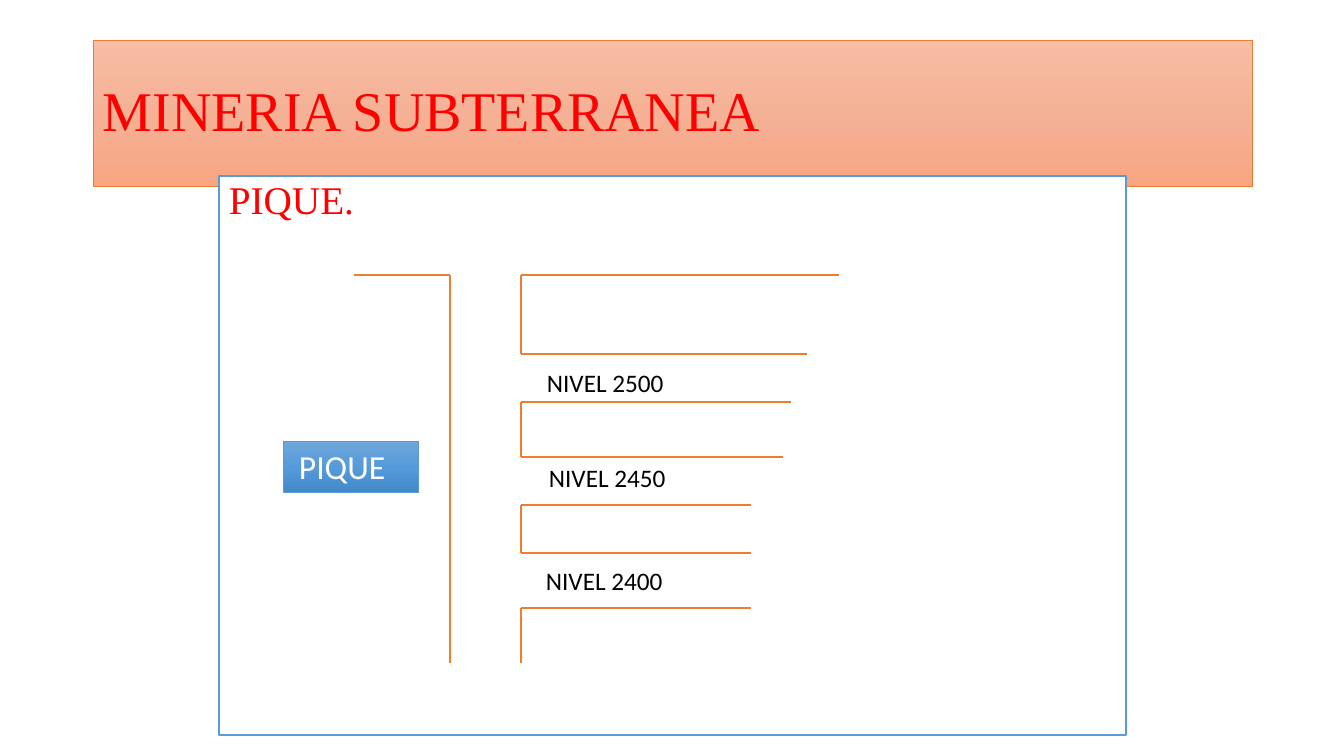
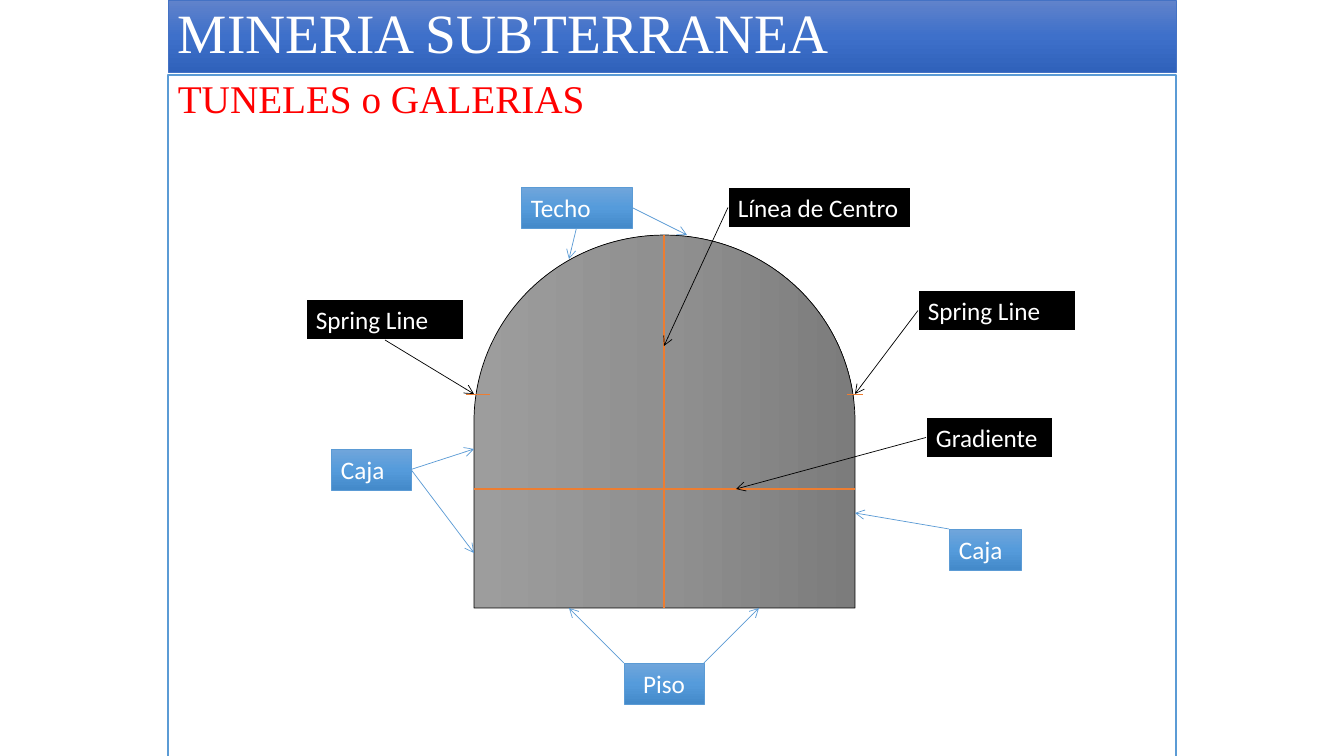
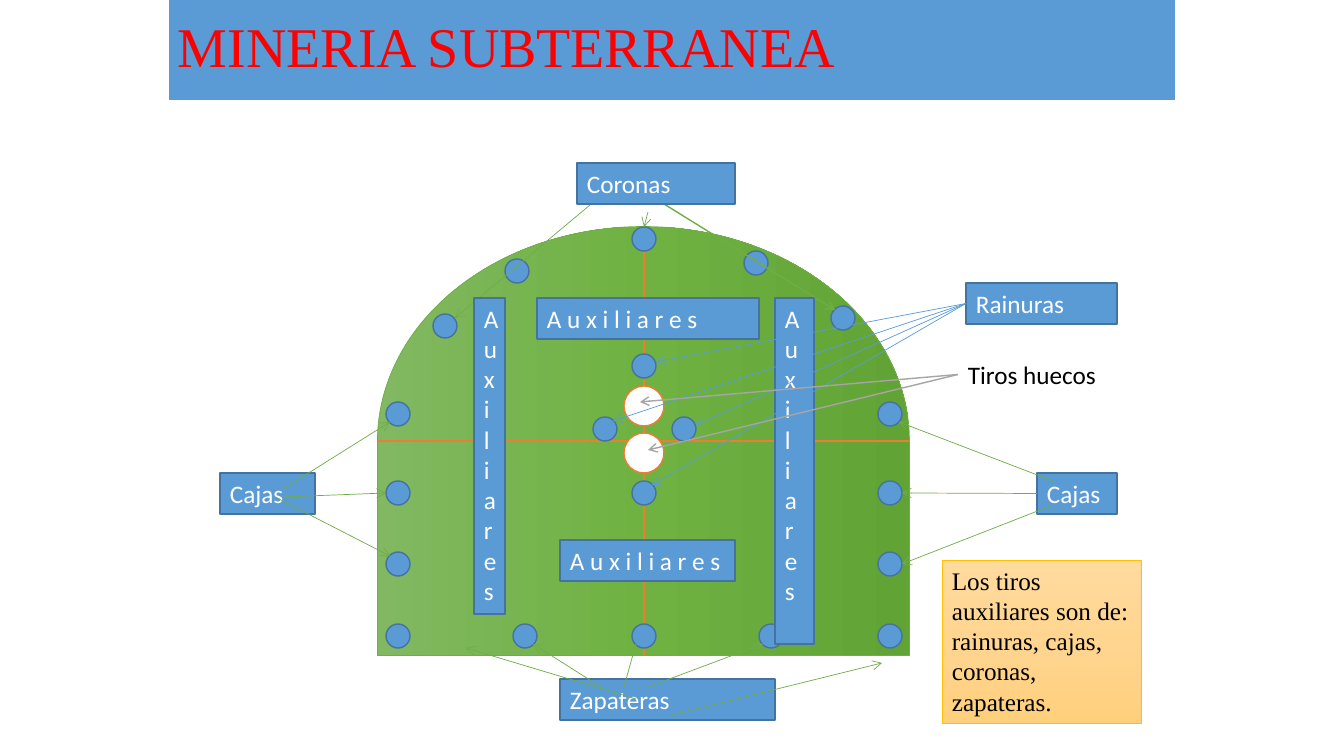
from copy import deepcopy

from lxml import etree
from pptx import Presentation
from pptx.dml.color import RGBColor
from pptx.enum.shapes import MSO_CONNECTOR, MSO_SHAPE
from pptx.enum.text import MSO_ANCHOR, PP_ALIGN
from pptx.oxml.ns import qn
from pptx.util import Pt

RECT = MSO_SHAPE.RECTANGLE
DELAY = MSO_SHAPE.FLOWCHART_DELAY
DISC = MSO_SHAPE.FLOWCHART_CONNECTOR
STRAIGHT = MSO_CONNECTOR.STRAIGHT
TOP, MIDDLE = MSO_ANCHOR.TOP, MSO_ANCHOR.MIDDLE
LEFT, CENTER = PP_ALIGN.LEFT, PP_ALIGN.CENTER

PX = 12192000 / 1344
ROW = 41  # height of a one-line label

BLACK = RGBColor(0x00, 0x00, 0x00)
WHITE = RGBColor(0xFF, 0xFF, 0xFF)
RED = RGBColor(0xFF, 0x00, 0x00)
ORANGE = RGBColor(0xED, 0x7D, 0x31)
BLUE = RGBColor(0x5B, 0x9B, 0xD5)
NAVY = RGBColor(0x43, 0x73, 0x9E)
ROYAL = RGBColor(0x44, 0x72, 0xC4)
GREEN = RGBColor(0x70, 0xAD, 0x47)
GREY = RGBColor(0xA5, 0xA5, 0xA5)
GOLD = RGBColor(0xFF, 0xC0, 0x00)

# Three-stop gradients, from light to dark
PEACH = [RGBColor(0xF7, 0xBD, 0xA5), RGBColor(0xF5, 0xB1, 0x96), RGBColor(0xF8, 0xA5, 0x82)]
SKY = [RGBColor(0x71, 0xA6, 0xDB), RGBColor(0x55, 0x9B, 0xDB), RGBColor(0x44, 0x8A, 0xCA)]
DEEP = [RGBColor(0x61, 0x83, 0xCB), RGBColor(0x3E, 0x70, 0xCA), RGBColor(0x30, 0x62, 0xBB)]
STONE = [RGBColor(0x9D, 0x9D, 0x9D), RGBColor(0x90, 0x90, 0x90), RGBColor(0x7C, 0x7C, 0x7C)]
LEAF = [RGBColor(0x81, 0xB8, 0x61), RGBColor(0x6F, 0xB2, 0x42), RGBColor(0x62, 0xA3, 0x36)]
SAND = [RGBColor(0xFF, 0xDB, 0x9E), RGBColor(0xFF, 0xD5, 0x90), RGBColor(0xFF, 0xD0, 0x7C)]

SANS = {"name": "Calibri", "size": Pt(18)}
LARGE = {"name": "Calibri", "size": Pt(24)}
SERIF = {"name": "Times New Roman", "size": Pt(18)}
HEAD = {"name": "Times New Roman", "size": Pt(40)}
SUB = {"name": "Times New Roman", "size": Pt(28)}

# Fill, outline, outline width, text colour
GLOSS = (SKY, BLUE, 0.5, WHITE)
DARK = (BLACK, WHITE, 1.5, WHITE)
FLAT = (BLUE, NAVY, 1, WHITE)
PANEL = (WHITE, BLUE, 1, RED)
RING = (WHITE, ORANGE, 1, BLACK)
PLAIN = (None, None, 0, BLACK)


def box(slide, kind, at, look, text="", font=SANS, anchor=TOP, align=LEFT, space=1.0):
    """Add a shape, or a text box when kind is None, in the given look."""
    fill, edge, width, ink = look
    place = [int(v * PX) for v in at]
    if kind is None:
        shape = slide.shapes.add_textbox(*place)
    else:
        shape = slide.shapes.add_shape(kind, *place)
        shape.shadow.inherit = False
        shape.line.color.rgb = edge
        shape.line.width = Pt(width)
        if isinstance(fill, list):
            shape.fill.gradient()
            shape.fill.gradient_angle = 270
            stops = next(shape.element.iter(qn("a:gsLst")))
            stops.insert(1, deepcopy(stops[0]))
            for stop, spot, tint in zip(shape.fill.gradient_stops, (0, 0.5, 1), fill):
                stop.position = spot
                stop.color.rgb = tint
        else:
            shape.fill.solid()
            shape.fill.fore_color.rgb = fill
    if text:
        frame = shape.text_frame
        frame.word_wrap = True
        frame.vertical_anchor = anchor
        frame.text = text
        for para in frame.paragraphs:
            para.alignment = align
            para.line_spacing = space
            for name, value in font.items():
                setattr(para.font, name, value)
            para.font.color.rgb = ink
    return shape


def line(slide, start, end, color, width, arrow=False):
    """Add a straight line; start is a point or a (shape, side) pair."""
    joined = not isinstance(start[0], int)
    first = end if joined else start
    link = slide.shapes.add_connector(STRAIGHT, *[int(v * PX) for v in (*first, *end)])
    if joined:
        link.begin_connect(*start)
    link.line.color.rgb = color
    link.line.width = Pt(width)
    props = link.element.spPr
    if arrow:
        etree.SubElement(props.find(qn("a:ln")), qn("a:tailEnd"), type="arrow")
    etree.SubElement(props, qn("a:effectLst"))


deck = Presentation()
deck.slide_width, deck.slide_height = int(1344 * PX), int(756 * PX)

# Titles
slides = []
for at, look, size in [
    ((93, 40, 1159, 146), (PEACH, ORANGE, 0.5, RED), 40),
    ((168, 0, 1008, 72), (DEEP, ROYAL, 0.5, WHITE), 39.6),
    ((168, -3, 1008, 104), (BLUE, WHITE, 1.5, RED), 40),
]:
    page = deck.slides.add_slide(deck.slide_layouts[6])
    box(page, RECT, at, look, "MINERIA SUBTERRANEA", {**HEAD, "size": Pt(size)}, MIDDLE, space=0.9)
    slides.append(page)
shaft, tunnel, blast = slides

for page, at, text in [
    (shaft, (219, 176, 907, 559), "PIQUE."),
    (tunnel, (168, 75, 1008, 684), "TUNELES o GALERIAS"),
]:
    box(page, RECT, at, PANEL, text, SUB, space=0.9)

# Slide 1: shaft walls and levels
line(shaft, (450, 275), (450, 663), ORANGE, 1.5)
line(shaft, (450, 275), (354, 275), ORANGE, 1.5)
for top, base, roof, floor in [
    (275, 354, 839, 807),
    (402, 457, 791, 783),
    (505, 553, 751, 751),
    (608, 663, 751, None),
]:
    line(shaft, (521, top), (521, base), ORANGE, 1.5)
    line(shaft, (521, top), (roof, top), ORANGE, 1.5)
    if floor:
        line(shaft, (521, base), (floor, base), ORANGE, 1.5)

for left, top, level in [(537, 362, 2500), (539, 457, 2450), (536, 560, 2400)]:
    box(shaft, None, (left, top, 174, ROW), PLAIN, f"NIVEL {level}")
sign = box(shaft, RECT, (283, 441, 135, 51), GLOSS, "PIQUE", LARGE)
sign.text_frame.margin_left = int(16 * PX)

# Slide 2: tunnel section
box(tunnel, DELAY, (478, 231, 373, 381), (STONE, BLACK, 0.5, WHITE)).rotation = 270
for start, end, width in [
    ((664, 235), (664, 608), 1),
    ((474, 489), (855, 489), 1),
    ((847, 394), (863, 394), 0.5),
    ((466, 394), (490, 394), 0.5),
]:
    line(tunnel, start, end, ORANGE, width)

# Slide 3: drilling pattern
box(blast, DELAY, (429, 175, 429, 532), (LEAF, GREEN, 0.5, WHITE)).rotation = 270
line(blast, (644, 227), (644, 656), ORANGE, 1.5)
line(blast, (378, 441), (910, 441), ORANGE, 1.5)
for top in (386, 433):
    box(blast, DISC, (624, top, 40, 40), RING)
cut = [(672, 417), (632, 354), (632, 481), (593, 417)]
lower = [(x, 624) for x in (386, 513, 632, 759, 878)]
sides = [(x, y) for x in (386, 878) for y in (402, 481, 552)]
crown = [(632, 227), (744, 251), (505, 259), (831, 306), (433, 314)]
for spot in cut + lower + sides + crown:
    box(blast, DISC, (*spot, 24, 24), FLAT)
line(blast, (664, 204), (835, 310), GREEN, 1, True)

# Labels with their arrows; a start is a point or a side of the label
column = "\n".join("Auxiliares")
spaced = " ".join("Auxiliares")
for page, text, at, look, color, width, arrows in [
    (tunnel, "Línea de Centro", (728, 187, 183, ROW), DARK, BLACK, 0.5, [(1, (664, 346))]),
    (tunnel, "Spring Line", (918, 290, 158, ROW), DARK, BLACK, 0.5, [(1, (855, 394))]),
    (tunnel, "Gradiente", (926, 417, 127, ROW), DARK, BLACK, 0.5, [(1, (736, 489))]),
    (tunnel, "Spring Line", (306, 299, 158, ROW), DARK, BLACK, 0.5, [(2, (474, 394))]),
    (tunnel, "Piso", (624, 663, 80, ROW), GLOSS, BLUE, 0.5,
     [((624, 663), (569, 608)), ((704, 663), (759, 608))]),
    (tunnel, "Caja", (331, 449, 80, ROW), GLOSS, BLUE, 0.5, [(3, (474, 449)), (3, (474, 553))]),
    (tunnel, "Caja", (949, 529, 72, ROW), GLOSS, BLUE, 0.5, [((949, 529), (855, 513))]),
    (tunnel, "Techo", (521, 187, 111, ROW), GLOSS, BLUE, 0.5, [(2, (569, 259)), (3, (687, 235))]),
    (blast, "Zapateras", (560, 679, 215, ROW), FLAT, GREEN, 0.5,
     [((636, 699), (466, 648)), ((672, 715), (882, 663)), ((624, 687), (636, 644)),
      ((648, 687), (763, 644)), ((601, 687), (533, 644))]),
    (blast, "Cajas", (1037, 473, 80, ROW), FLAT, GREEN, 0.5,
     [((1053, 481), (899, 422)), (1, (902, 493)), ((1053, 505), (902, 564))]),
    (blast, "Coronas", (577, 163, 158, ROW), FLAT, GREEN, 0.5,
     [((590, 205), (455, 318)), ((648, 212), (644, 227))]),
    (blast, "Cajas", (220, 473, 95, ROW), FLAT, GREEN, 0.5,
     [((283, 489), (390, 422)), ((283, 497), (386, 493)), ((275, 497), (390, 556))]),
    (blast, column, (474, 298, 31, 316), FLAT, None, 0, []),
    (blast, spaced, (537, 298, 222, ROW), FLAT, None, 0, []),
    (blast, spaced, (560, 540, 175, ROW), FLAT, None, 0, []),
    (blast, column, (775, 298, 39, 346), FLAT, None, 0, []),
    (blast, "Rainuras", (966, 283, 151, ROW), FLAT, BLUE, 0.5,
     [(1, (656, 362)), (1, (696, 425)), (1, (652, 485)), (1, (613, 421))]),
    (blast, "Tiros huecos", (958, 354, 166, ROW), PLAIN, GREY, 1,
     [(1, (640, 402)), (1, (648, 450))]),
]:
    kind = None if look is PLAIN else RECT
    label = box(page, kind, at, look, text, align=CENTER if text == "Piso" else LEFT)
    for start, end in arrows:
        line(page, (label, start) if isinstance(start, int) else start, end, color, width, True)

box(blast, RECT, (942, 560, 199, 163), (SAND, GOLD, 0.5, BLACK),
    "Los tiros auxiliares son de: rainuras, cajas, coronas, zapateras.", SERIF)

deck.save("out.pptx")
